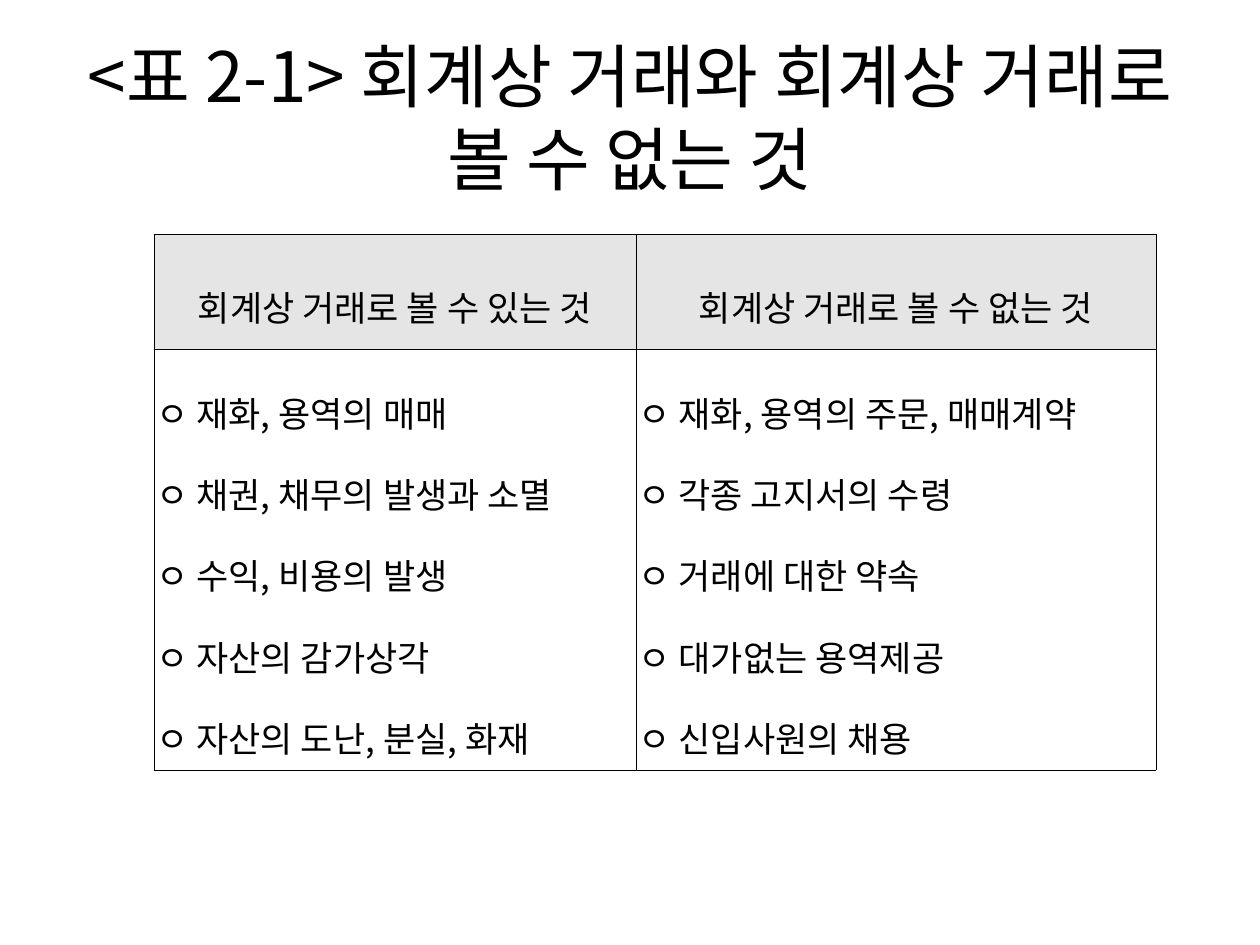
from dataclasses import dataclass

from lxml.etree import SubElement
from pptx import Presentation
from pptx.dml.color import RGBColor as Color
from pptx.enum.text import MSO_ANCHOR as Anchor, PP_ALIGN as Align
from pptx.oxml import parse_xml
from pptx.oxml.ns import nsdecls, qn
from pptx.util import Cm, Pt


@dataclass(frozen=True)
class Theme:
    font: str = "Noto Sans CJK KR"
    ink: str = "000000"
    paper: str = "FFFFFF"
    header_fill: str = "E5E5E5"
    title_size: float = 39.6
    table_size: float = 20
    line_spacing: float = 1.6
    border: float = 0.28


THEME = Theme()

TITLE = "<표 2-1> 회계상 거래와 회계상 거래로 볼 수 없는 것"
COLUMNS = {
    "회계상 거래로 볼 수 있는 것": [
        "재화, 용역의 매매",
        "채권, 채무의 발생과 소멸",
        "수익, 비용의 발생",
        "자산의 감가상각",
        "자산의 도난, 분실, 화재",
    ],
    "회계상 거래로 볼 수 없는 것": [
        "재화, 용역의 주문, 매매계약",
        "각종 고지서의 수령",
        "거래에 대한 약속",
        "대가없는 용역제공",
        "신입사원의 채용",
    ],
}


def write_lines(frame, lines, size, align, spacing=None):
    """Fill a text frame with one paragraph for each line."""
    for index, line in enumerate(lines):
        para = frame.add_paragraph() if index else frame.paragraphs[0]
        para.alignment = align
        para.line_spacing = spacing
        span = para.add_run()
        span.text = line
        span.font.size = Pt(size)
        span.font.name = THEME.font
        span.font.color.rgb = Color.from_string(THEME.ink)
        # East Asian glyphs take their own typeface entry
        SubElement(span.font._element, qn("a:ea"), typeface=THEME.font)


def add_borders(cell):
    """Draw a thin line on all four sides of a cell."""
    props = cell._tc.get_or_add_tcPr()
    for index, side in enumerate("LRTB"):
        props.insert(index, parse_xml(
            f'<a:ln{side} {nsdecls("a")} w="{int(Pt(THEME.border))}">'
            f'<a:solidFill><a:srgbClr val="{THEME.ink}"/></a:solidFill>'
            f'</a:ln{side}>'))


def fill_cell(cell, lines, align, fill):
    cell.margin_left = cell.margin_right = Cm(0.05)
    cell.margin_top = cell.margin_bottom = Cm(0.05)
    cell.vertical_anchor = Anchor.MIDDLE
    cell.fill.solid()
    cell.fill.fore_color.rgb = Color.from_string(fill)
    add_borders(cell)
    write_lines(cell.text_frame, lines, THEME.table_size, align,
                THEME.line_spacing)


def add_title(page, left, top, width, height):
    box = page.shapes.add_textbox(left, top, width, height)
    frame = box.text_frame
    frame.word_wrap = True
    frame.vertical_anchor = Anchor.MIDDLE
    write_lines(frame, [TITLE], THEME.title_size, Align.CENTER)


def add_comparison(page, left, top, width, height):
    table = page.shapes.add_table(2, len(COLUMNS), left, top, width,
                                  height).table
    first_width, header_height = Cm(9.72), Cm(2.31)
    table.columns[0].width = first_width
    table.columns[1].width = width - first_width
    table.rows[0].height = header_height
    table.rows[1].height = height - header_height
    for column, (heading, items) in enumerate(COLUMNS.items()):
        fill_cell(table.cell(0, column), [heading], Align.CENTER,
                  THEME.header_fill)
        fill_cell(table.cell(1, column), [f"ㅇ {item}" for item in items],
                  Align.JUSTIFY, THEME.paper)


def main():
    deck = Presentation()
    deck.slide_width, deck.slide_height = Cm(25.4), Cm(19.05)
    page = deck.slides.add_slide(deck.slide_layouts[6])
    # Heading above the two-column comparison
    add_title(page, Cm(1.27), Cm(0.76), Cm(22.86), Cm(3.18))
    add_comparison(page, Cm(3.1), Cm(4.72), Cm(20.2), Cm(10.8))
    deck.save("out.pptx")


if __name__ == "__main__":
    main()
